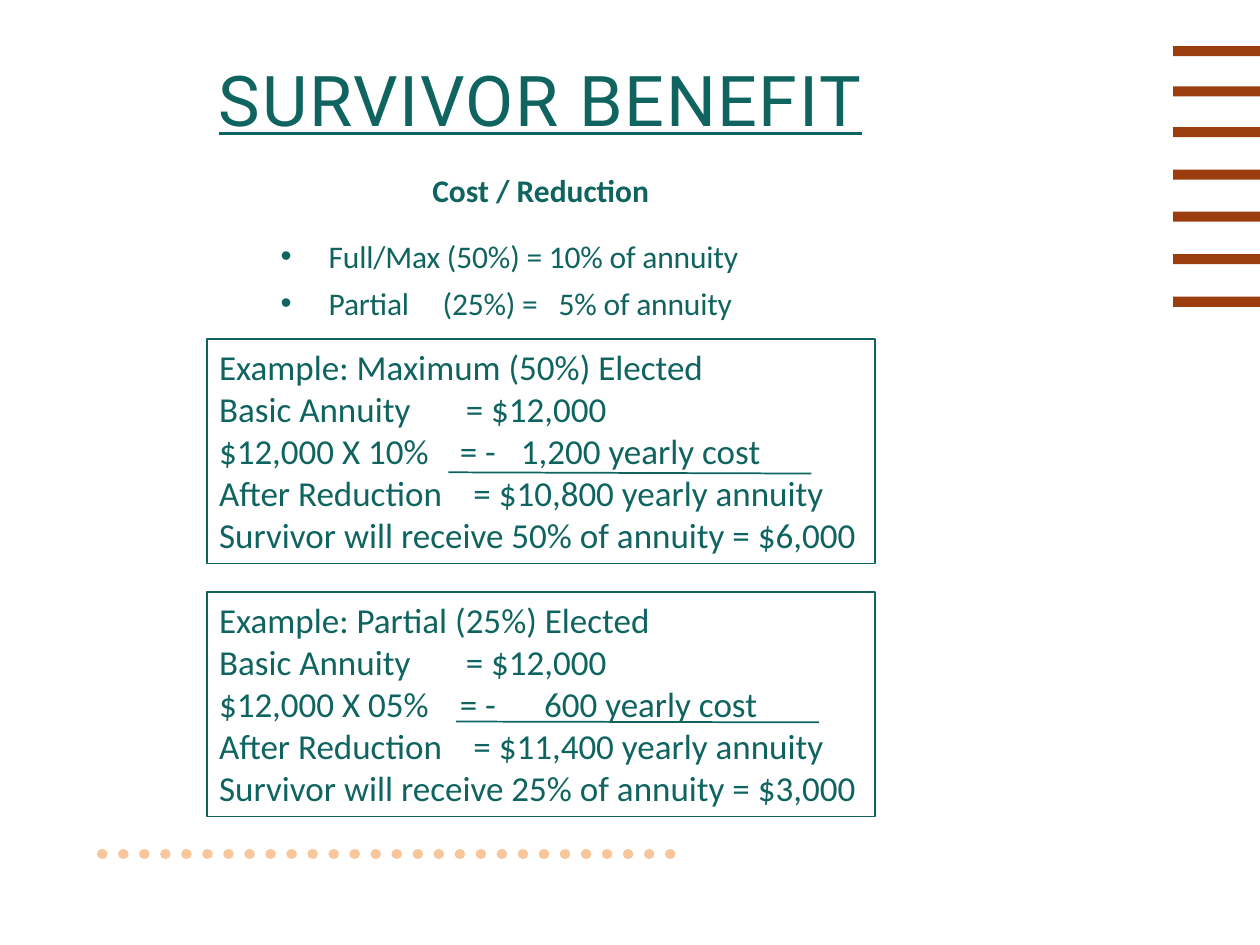
from lxml import etree
from pptx import Presentation
from pptx.dml.color import RGBColor
from pptx.enum import dml, shapes, text
from pptx.oxml import ns
from pptx.util import Pt

TEAL = RGBColor(0x0F, 0x64, 0x60)
RUST = RGBColor(0x9C, 0x3D, 0x10)
PEACH = RGBColor(0xF9, 0xC5, 0x9B)
WHITE = RGBColor(0xFF, 0xFF, 0xFF)


def add_rule(slide, x1, y1, x2, y2, color, width):
    line = slide.shapes.add_connector(
        shapes.MSO_CONNECTOR.STRAIGHT, Pt(x1), Pt(y1), Pt(x2), Pt(y2))
    line.line.color.rgb = color
    line.line.width = Pt(width)
    etree.SubElement(line._element.spPr, ns.qn("a:effectLst"))
    return line


def write_paragraph(paragraph, content, size, tabs=(), bullet=None, font="Calibri"):
    """Set the text, with left tab stops in points and an optional bullet."""
    paragraph.text = content
    properties = paragraph._p.get_or_add_pPr()
    if bullet:
        etree.SubElement(properties, ns.qn("a:buFont"), typeface="Arial")
        etree.SubElement(properties, ns.qn("a:buChar"), char=bullet)
    if tabs:
        tab_list = etree.SubElement(properties, ns.qn("a:tabLst"))
        for stop in tabs:
            etree.SubElement(tab_list, ns.qn("a:tab"), pos=str(Pt(stop)), algn="l")
    for run in paragraph.runs:
        run.font.size = Pt(size)
        run.font.name = font
        run.font.color.rgb = TEAL


presentation = Presentation()
presentation.slide_width, presentation.slide_height = Pt(720), Pt(540)
slide = presentation.slides.add_slide(presentation.slide_layouts[6])

# Decoration: bars at the right edge, dotted rule at the bottom
for center in (29.2, 52.2, 75.5, 99.8, 123.8, 148.1, 172.4):
    bar = slide.shapes.add_shape(
        shapes.MSO_SHAPE.RECTANGLE, Pt(670.4), Pt(center - 2.9), Pt(50), Pt(5.8))
    bar.shadow.inherit = False
    bar.fill.solid()
    bar.fill.fore_color.rgb = RUST
    bar.line.fill.background()
dots = add_rule(slide, 383, 488, 57.6, 488, PEACH, 6)
dots.line.dash_style = dml.MSO_LINE.ROUND_DOT
dots.line._ln.set("cap", "rnd")

# Title, subtitle and bullets
title = slide.shapes.add_textbox(Pt(33.8), Pt(16.6), Pt(550), Pt(85.7))
title.text_frame.word_wrap = True
title.text_frame.vertical_anchor = text.MSO_ANCHOR.MIDDLE
paragraph = title.text_frame.paragraphs[0]
write_paragraph(paragraph, "SURVIVOR BENEFIT", 40, font="Roboto")
paragraph.alignment = text.PP_ALIGN.CENTER
paragraph.line_spacing = 0.9
paragraph.runs[0].font.underline = True
paragraph.runs[0].font._element.set("spc", "100")

subtitle = slide.shapes.add_textbox(Pt(131), Pt(94.3), Pt(356), Pt(29))
subtitle.text_frame.word_wrap = True
paragraph = subtitle.text_frame.paragraphs[0]
write_paragraph(paragraph, "Cost / Reduction", 18)
paragraph.alignment = text.PP_ALIGN.CENTER
paragraph.runs[0].font.bold = True

rates = slide.shapes.add_textbox(Pt(105.1), Pt(127.4), Pt(360.7), Pt(56))
rates.text_frame.word_wrap = True
rates.text_frame.text = "\n".join(
    ["Full/Max (50%) = 10% of annuity", "Partial\t(25%) =\t5% of annuity"])
for index, paragraph in enumerate(rates.text_frame.paragraphs):
    write_paragraph(paragraph, paragraph.text, 18, (140.8, 207), "•")
    paragraph._p.pPr.set("marL", str(Pt(75.6)))
    paragraph._p.pPr.set("indent", str(Pt(-27.4)))
    paragraph.space_before = Pt(5.2 * index)
    for run in paragraph.runs:
        run.font._element.set("spc", "-10")
rates.text_frame.margin_top = Pt(8)

# Worked examples: top, election, share, rate, cost, cost tab, reduced, survivor
examples = [
    (193.7, "Maximum", "50%", "10%", "1,200", 172.5, "$10,800", "$6,000"),
    (338.4, "Partial", "25%", "05%", "600", 185.8, "$11,400", "$3,000"),
]
for top, election, share, rate, cost, cost_tab, reduced, survivor in examples:
    box = slide.shapes.add_shape(
        shapes.MSO_SHAPE.RECTANGLE, Pt(118.1), Pt(top), Pt(381.8), Pt(128.3))
    box.shadow.inherit = False
    box.fill.solid()
    box.fill.fore_color.rgb = WHITE
    box.line.color.rgb = TEAL
    box.line.width = Pt(1)
    frame = box.text_frame
    frame.word_wrap = True
    frame.vertical_anchor = text.MSO_ANCHOR.TOP
    rows = [
        (f"Example: {election} ({share}) Elected", ()),
        ("Basic Annuity\t= $12,000", (141,)),
        (f"$12,000 X {rate}\t= -\t{cost} yearly cost", (137.6, cost_tab)),
        (f"After Reduction\t= {reduced} yearly annuity", (145.4,)),
        (f"Survivor will receive {share} of annuity = {survivor}", ()),
    ]
    frame.text = "\n".join(content for content, tabs in rows)
    for paragraph, (content, tabs) in zip(frame.paragraphs, rows):
        write_paragraph(paragraph, content, 20, tabs)
        paragraph.alignment = text.PP_ALIGN.LEFT

# Sum lines under the yearly costs
add_rule(slide, 256.3, 269.9, 463.7, 270.6, TEAL, 1)
add_rule(slide, 260.6, 412.3, 468, 412.8, TEAL, 1)

presentation.save("out.pptx")
